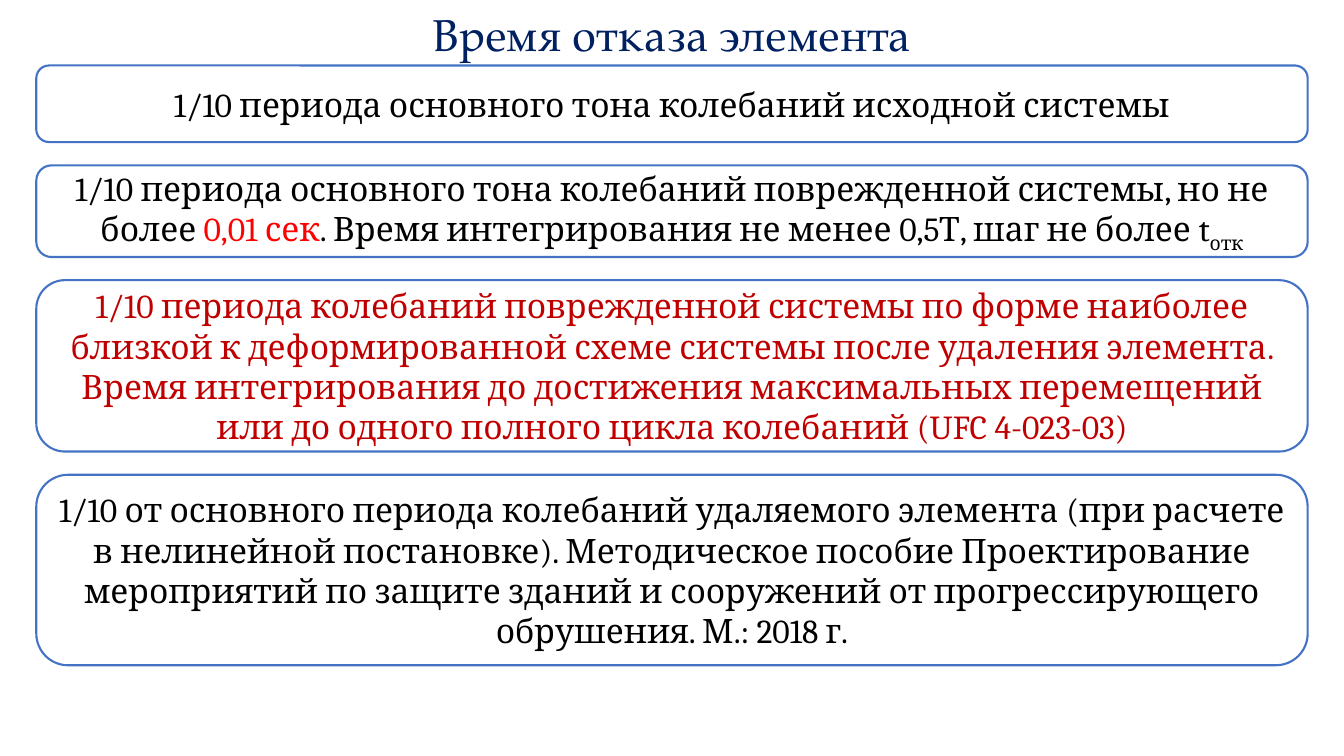
from dataclasses import dataclass

from pptx import Presentation
from pptx.dml.color import RGBColor as RGB
from pptx.enum.shapes import MSO_SHAPE as Shape
from pptx.enum.text import MSO_ANCHOR as Anchor, MSO_AUTO_SIZE as Fit, PP_ALIGN as Align
from pptx.util import Inches, Pt


@dataclass(frozen=True)
class Theme:
    head_font: str = "TeX Gyre Pagella"
    body_font: str = "Cambria"
    head_size: int = 32
    body_size: int = 24
    line_width: float = 1.5
    navy: RGB = RGB(0x00, 0x20, 0x60)
    blue: RGB = RGB(0x44, 0x72, 0xC4)
    white: RGB = RGB(0xFF, 0xFF, 0xFF)
    black: RGB = RGB(0x00, 0x00, 0x00)
    red: RGB = RGB(0xFF, 0x00, 0x00)
    dark_red: RGB = RGB(0xC0, 0x00, 0x00)


THEME = Theme()
LEFT, WIDTH = 0.36, 12.61
TOP, GAP = 0.65, 0.23

# Each rule: box height, then runs of (text, colour, is subscript)
RULES = [
    (0.76, [("1/10 периода основного тона колебаний исходной системы", THEME.black, False)]),
    (0.91, [
        ("1/10 периода основного тона колебаний поврежденной системы, но не более ",
         THEME.black, False),
        ("0,01 сек", THEME.red, False),
        (". Время интегрирования не менее 0,5Т, шаг не более t", THEME.black, False),
        ("отк", THEME.black, True),
    ]),
    (1.70, [(
        "1/10 периода колебаний поврежденной системы по форме наиболее близкой к "
        "деформированной схеме системы после удаления элемента. Время интегрирования "
        "до достижения максимальных перемещений или до одного полного цикла колебаний "
        "(UFC 4-023-03)", THEME.dark_red, False)]),
    (1.89, [(
        "1/10 от основного периода колебаний удаляемого элемента (при расчете в "
        "нелинейной постановке). Методическое пособие Проектирование мероприятий по "
        "защите зданий и сооружений от прогрессирующего обрушения. М.: 2018 г.",
        THEME.black, False)]),
]


def add_run(para, text, font, size, color, sub=False):
    run = para.add_run()
    run.text = text
    run.font.name = font
    run.font.size = Pt(size)
    run.font.color.rgb = color
    if sub:
        run.font._element.set("baseline", "-25000")


def set_title(slide, text):
    title = slide.shapes.title
    title.left, title.top = Inches(LEFT), Inches(0.04)
    title.width, title.height = Inches(WIDTH), Inches(0.62)
    frame = title.text_frame
    frame.auto_size = Fit.NONE
    frame.vertical_anchor = Anchor.BOTTOM
    para = frame.paragraphs[0]
    para.alignment = Align.CENTER
    para.line_spacing = 0.9
    add_run(para, text, THEME.head_font, THEME.head_size, THEME.navy)


def add_box(slide, top, height, runs):
    box = slide.shapes.add_shape(
        Shape.ROUNDED_RECTANGLE, Inches(LEFT), Inches(top), Inches(WIDTH), Inches(height))
    box.shadow.inherit = False
    box.fill.solid()
    box.fill.fore_color.rgb = THEME.white
    box.line.color.rgb = THEME.blue
    box.line.width = Pt(THEME.line_width)
    frame = box.text_frame
    frame.word_wrap = True
    frame.vertical_anchor = Anchor.MIDDLE
    para = frame.paragraphs[0]
    para.alignment = Align.CENTER
    for text, color, sub in runs:
        add_run(para, text, THEME.body_font, THEME.body_size, color, sub)


def main():
    deck = Presentation()
    deck.slide_width, deck.slide_height = Inches(13.33), Inches(7.5)
    slide = deck.slides.add_slide(deck.slide_layouts.get_by_name("Title Only"))
    set_title(slide, "Время отказа элемента")
    top = TOP
    for height, runs in RULES:
        add_box(slide, top, height, runs)
        top += height + GAP
    deck.save("out.pptx")


if __name__ == "__main__":
    main()
